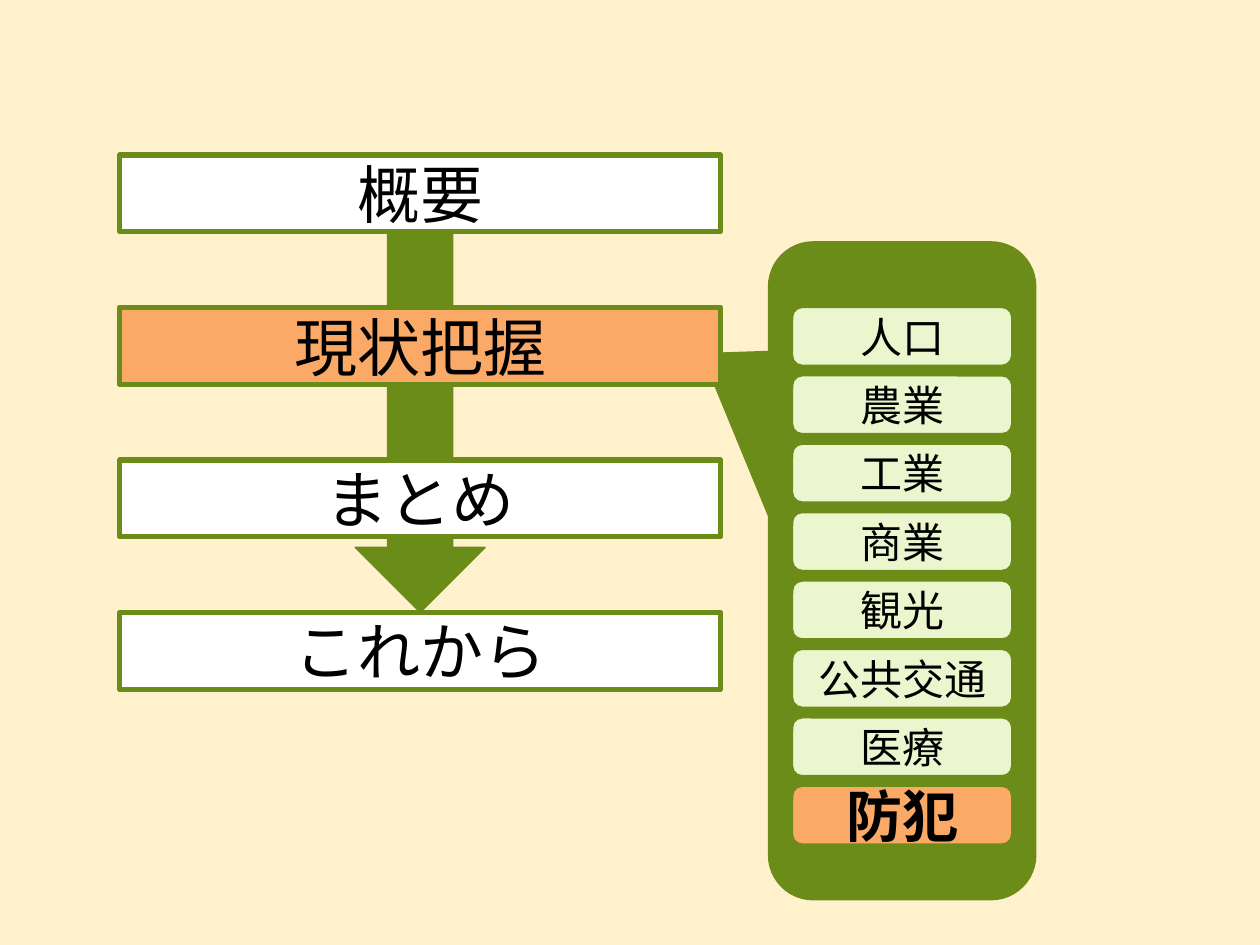
from pptx import Presentation
from pptx.dml.color import RGBColor
from pptx.enum import shapes, text
from pptx.util import Inches, Pt

# Content
STEPS = ["概要", "現状把握", "まとめ", "これから"]
CURRENT_STEP = "現状把握"
TOPICS = ["人口", "農業", "工業", "商業", "観光", "公共交通", "医療", "防犯"]
CURRENT_TOPIC = "防犯"

COLORS = {
    "background": "FFF1CB",
    "green": "6C8C1A",
    "step": "FFFFFF",
    "topic": "EBF6CE",
    "current": "FAA966",
    "text": "000000",
}
FONT = "Calibri"
THIN, THICK = 0.85, 3

# Layout in inches
STEP_LEFT, STEP_TOP, STEP_WIDTH, STEP_HEIGHT, STEP_PITCH = 0.95, 1.23, 4.77, 0.61, 1.21
TOPIC_LEFT, TOPIC_TOP, TOPIC_WIDTH, TOPIC_HEIGHT = 6.29, 2.44, 1.74, 0.46
TOPIC_PITCH = 3.8 / (len(TOPICS) - 1)
ARROW_TOP, ARROW_WIDTH = 1.76, 1.03


def color(name):
    return RGBColor.from_string(COLORS[name])


def add_block(slide, kind, box, fill, line_width=THIN):
    block = slide.shapes.add_shape(kind, *map(Inches, box))
    block.shadow.inherit = False
    block.fill.solid()
    block.fill.fore_color.rgb = color(fill)
    block.line.color.rgb = color("green")
    block.line.width = Pt(line_width)
    return block


def add_label(block, label, size, bold=False):
    frame = block.text_frame
    frame.word_wrap = True
    frame.vertical_anchor = text.MSO_ANCHOR.MIDDLE
    paragraph = frame.paragraphs[0]
    paragraph.text = label
    paragraph.alignment = text.PP_ALIGN.CENTER
    paragraph.font.name = FONT
    paragraph.font.size = Pt(size)
    paragraph.font.bold = bold
    paragraph.font.color.rgb = color("text")


def main():
    deck = Presentation()
    deck.slide_width, deck.slide_height = Inches(10), Inches(7.5)
    slide = deck.slides.add_slide(deck.slide_layouts[6])
    slide.background.fill.solid()
    slide.background.fill.fore_color.rgb = color("background")

    # Callout from the current step, holding its topics
    callout = add_block(slide, shapes.MSO_SHAPE.ROUNDED_RECTANGULAR_CALLOUT,
                        (6.1, 1.92, 2.12, 5.22), "green")
    for index, value in enumerate((-0.75, -0.33, 0.167)):
        callout.adjustments[index] = value

    # Arrow behind the steps, ending at the last one
    arrow_left = STEP_LEFT + (STEP_WIDTH - ARROW_WIDTH) / 2
    last_step_top = STEP_TOP + STEP_PITCH * (len(STEPS) - 1)
    add_block(slide, shapes.MSO_SHAPE.DOWN_ARROW,
              (arrow_left, ARROW_TOP, ARROW_WIDTH, last_step_top - ARROW_TOP), "green")

    # Steps
    for index, step in enumerate(STEPS):
        box = (STEP_LEFT, STEP_TOP + index * STEP_PITCH, STEP_WIDTH, STEP_HEIGHT)
        fill = "current" if step == CURRENT_STEP else "step"
        add_label(add_block(slide, shapes.MSO_SHAPE.RECTANGLE, box, fill, THICK), step, 36)

    # Topics
    for index, topic in enumerate(TOPICS):
        box = (TOPIC_LEFT, TOPIC_TOP + index * TOPIC_PITCH, TOPIC_WIDTH, TOPIC_HEIGHT)
        current = topic == CURRENT_TOPIC
        block = add_block(slide, shapes.MSO_SHAPE.ROUNDED_RECTANGLE, box,
                          "current" if current else "topic")
        add_label(block, topic, 32 if current else 24, bold=current)

    deck.save("out.pptx")


if __name__ == "__main__":
    main()
